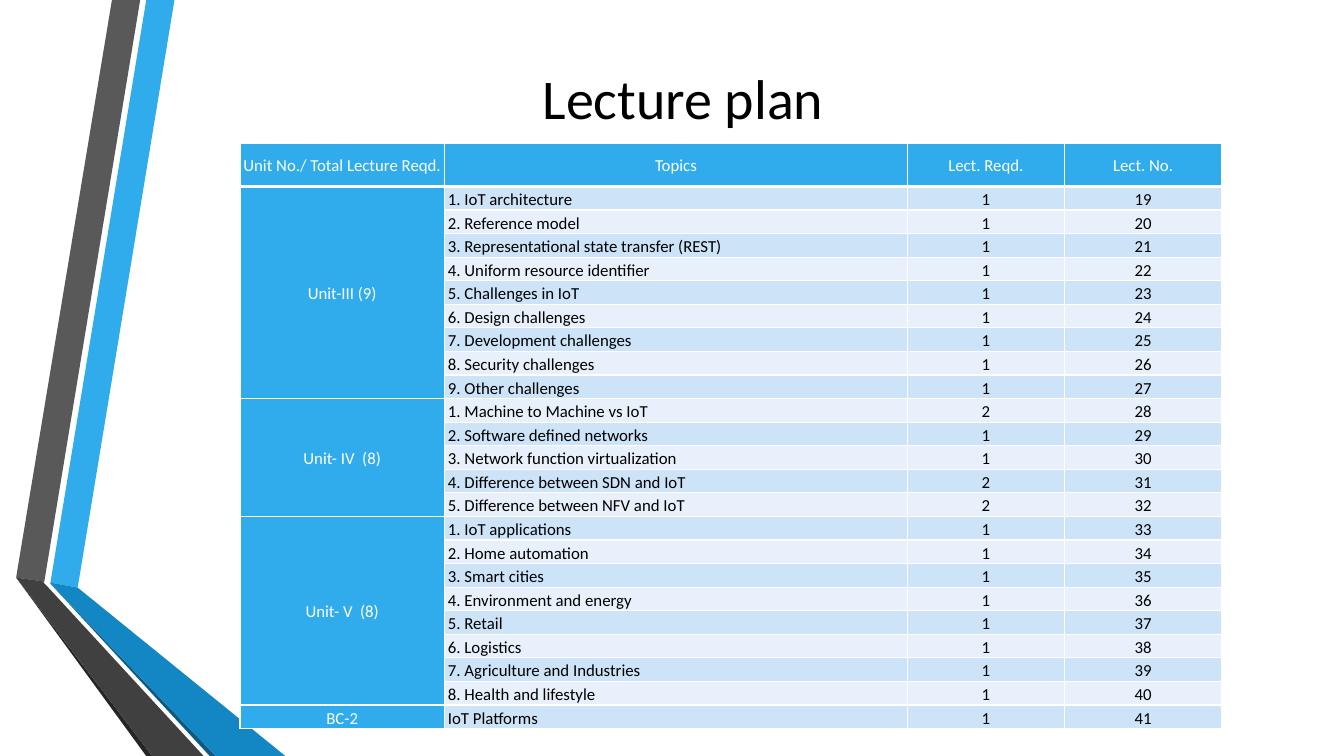
from lxml.etree import SubElement
from pptx import Presentation
from pptx.dml.color import RGBColor as Rgb
from pptx.enum.text import MSO_ANCHOR as Anchor, PP_ALIGN as Align
from pptx.oxml.ns import qn
from pptx.util import Inches, Pt

COLORS = {
    "sky": "30ACEC", "ocean": "1287C3", "navy": "0C5A82",
    "gray": "595959", "charcoal": "404040", "coal": "262626",
    "band": "CDE3F8", "pale": "E8F1FB", "white": "FFFFFF", "black": "000000",
}
RIBBONS = [
    ("sky", [(3.75, 77.07), (5.78, 77.73), (12.98, 0), (10.88, 0)]),
    ("gray", [(10.43, 0), (8.33, 0), (1.2, 76.4), (3.3, 76.93)]),
    ("coal", [(1.2, 76.4), (10.88, 100), (11.33, 100)]),
    ("navy", [(3.75, 77.2), (15.6, 100), (16.05, 100)]),
    ("ocean", [(3.75, 77.2), (16.05, 100), (21.23, 100), (5.78, 77.73), (3.75, 77.07)]),
    ("charcoal", [(15.15, 100), (3.6, 77.73), (3.23, 77.07), (3.3, 76.93),
                  (1.2, 76.4), (11.33, 100)]),
]
HEADINGS = ["Unit No./ Total Lecture Reqd.", "Topics", "Lect. Reqd.", "Lect. No."]
UNITS = [
    ("Unit-III (9)", [
        ("1. IoT architecture", 1), ("2. Reference model", 1),
        ("3. Representational state transfer (REST)", 1),
        ("4. Uniform resource identifier", 1), ("5. Challenges in IoT", 1),
        ("6. Design challenges", 1), ("7. Development challenges", 1),
        ("8. Security challenges", 1), ("9. Other challenges", 1)]),
    ("Unit- IV  (8)", [
        ("1. Machine to Machine vs IoT", 2), ("2. Software defined networks", 1),
        ("3. Network function virtualization", 1),
        ("4. Difference between SDN and IoT", 2),
        ("5. Difference between NFV and IoT", 2)]),
    ("Unit- V  (8)", [
        ("1. IoT applications", 1), ("2. Home automation", 1), ("3. Smart cities", 1),
        ("4. Environment and energy", 1), ("5. Retail", 1), ("6. Logistics", 1),
        ("7. Agriculture and Industries", 1), ("8. Health and lifestyle", 1)]),
    ("BC-2", [("IoT Platforms", 1)]),
]
FIRST_LECTURE = 19
COLUMN_WIDTHS = [15.23, 34.43, 11.7, 11.7]
HEADER_HEIGHT, ROW_HEIGHT = 5.73, 3.12


class LecturePlan:
    """Draws the slide on a grid of 100 columns by 100 rows."""

    font = "Calibri"

    def __init__(self):
        self.deck = Presentation()
        self.deck.slide_width, self.deck.slide_height = Inches(13.33), Inches(7.5)
        self.slide = self.deck.slides.add_slide(self.deck.slide_layouts[5])

    def cols(self, count):
        return round(self.deck.slide_width * count / 100)

    def rows(self, count):
        return round(self.deck.slide_height * count / 100)

    def color(self, name):
        return Rgb.from_string(COLORS[name])

    def style(self, paragraph, size, color, align):
        paragraph.alignment = align
        paragraph.font.name, paragraph.font.size = self.font, Pt(size)
        paragraph.font.bold = False
        paragraph.font.color.rgb = self.color(color)

    def ribbon(self, color, corners):
        start, *others = [(self.cols(x), self.rows(y)) for x, y in corners]
        outline = self.slide.shapes.build_freeform(*start)
        outline.add_line_segments(others, close=True)
        ribbon = outline.convert_to_shape()
        ribbon.shadow.inherit = False
        ribbon.fill.solid()
        ribbon.fill.fore_color.rgb = self.color(color)
        ribbon.line.fill.background()

    def title(self, text, left, top, width, height):
        title = self.slide.shapes.title
        title.left, title.top = self.cols(left), self.rows(top)
        title.width, title.height = self.cols(width), self.rows(height)
        title.text_frame.text = text
        title.text_frame.vertical_anchor = Anchor.MIDDLE
        self.style(title.text_frame.paragraphs[0], 40, "black", Align.CENTER)
        self.slide.shapes.element.append(title.element)

    def borders(self, cell, bottom):
        properties = cell._tc.get_or_add_tcPr()
        for side, points in zip("LRTB", (1, 1, 1, bottom)):
            line = SubElement(properties, qn(f"a:ln{side}"), w=str(Pt(points)))
            paint = SubElement(line, qn("a:solidFill"))
            SubElement(paint, qn("a:srgbClr"), val=COLORS["white"])

    def cell(self, cell, text, fill, color="black", align=Align.CENTER, bottom=1):
        cell.text = text
        self.borders(cell, bottom)
        cell.fill.solid()
        cell.fill.fore_color.rgb = self.color(fill)
        cell.vertical_anchor = Anchor.MIDDLE
        cell.margin_left = cell.margin_right = self.cols(0.25)
        cell.margin_top = cell.margin_bottom = 0
        paragraph = cell.text_frame.paragraphs[0]
        paragraph.line_spacing = 1.15
        self.style(paragraph, 12, color, align)

    def schedule(self, left, top):
        topic_count = sum(len(topics) for _, topics in UNITS)
        height = HEADER_HEIGHT + topic_count * ROW_HEIGHT
        table = self.slide.shapes.add_table(
            topic_count + 1, len(HEADINGS), self.cols(left), self.rows(top),
            self.cols(sum(COLUMN_WIDTHS)), self.rows(height)).table
        for column, width in zip(table.columns, COLUMN_WIDTHS):
            column.width = self.cols(width)
        for index, row in enumerate(table.rows):
            row.height = self.rows(ROW_HEIGHT if index else HEADER_HEIGHT)
        for index, heading in enumerate(HEADINGS):
            self.cell(table.cell(0, index), heading, "sky", "white", bottom=3)
        row = 1
        for unit, topics in UNITS:
            first = row
            for topic, required in topics:
                band = "band" if row % 2 else "pale"
                lecture = FIRST_LECTURE + row - 1
                self.cell(table.cell(row, 0), unit if row == first else "", "sky", "white")
                self.cell(table.cell(row, 1), topic, band, align=Align.LEFT)
                self.cell(table.cell(row, 2), str(required), band)
                self.cell(table.cell(row, 3), str(lecture), band)
                row += 1
            if len(topics) > 1:
                table.cell(first, 0).merge(table.cell(row - 1, 0))


def main():
    plan = LecturePlan()
    for color, corners in RIBBONS:
        plan.ribbon(color, corners)
    plan.title("Lecture plan", 3.3, 6.67, 95.05, 12.27)
    plan.schedule(17.85, 18.93)
    plan.deck.save("out.pptx")


if __name__ == "__main__":
    main()
